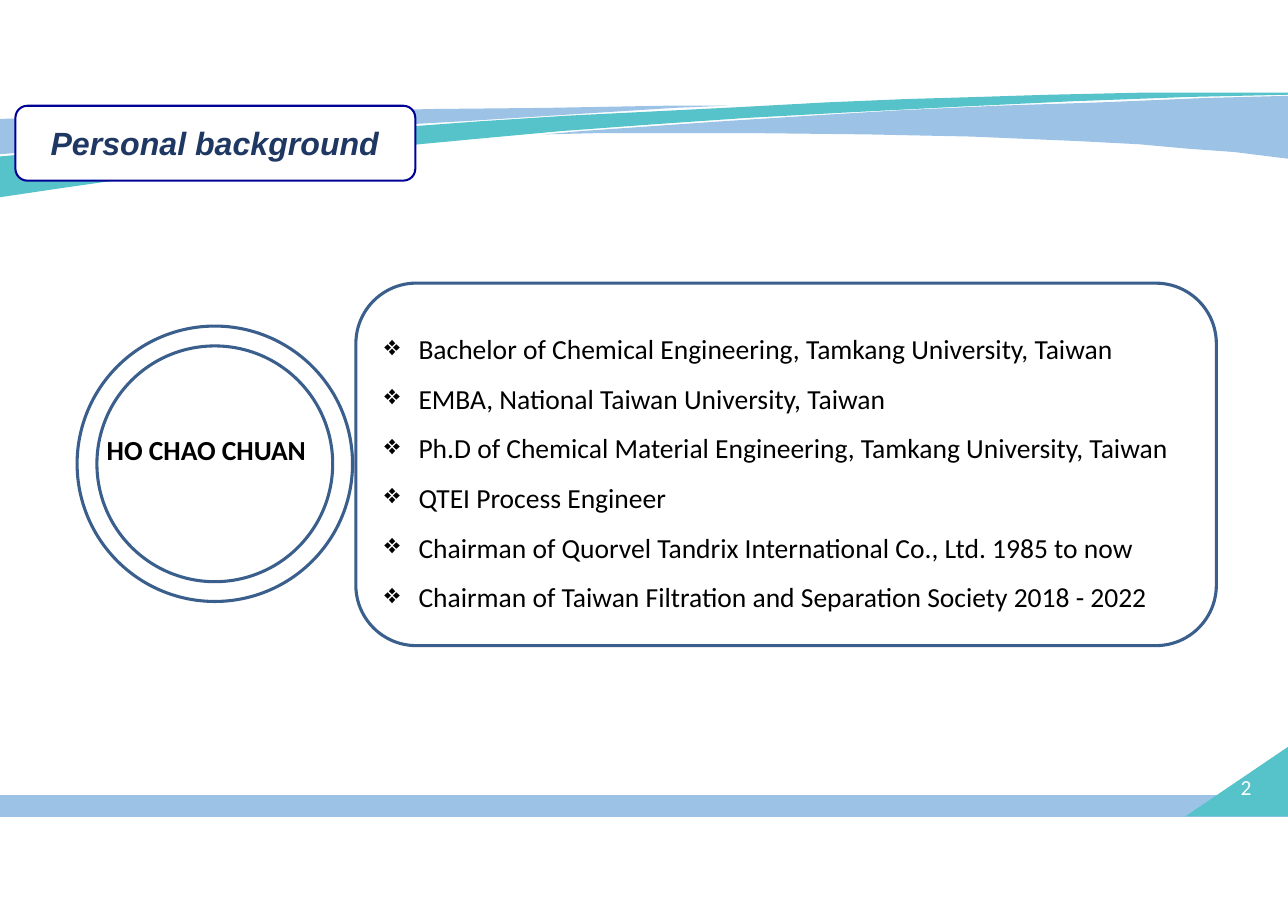
from dataclasses import dataclass

from lxml import etree
from pptx import Presentation
from pptx.dml.color import RGBColor
from pptx.enum.shapes import MSO_SHAPE as Shape
from pptx.enum.text import MSO_ANCHOR as Anchor, MSO_AUTO_SIZE as AutoSize, PP_ALIGN as Align
from pptx.oxml.ns import qn
from pptx.util import Inches, Pt


@dataclass(frozen=True)
class Theme:
    blue: str = "9CC3E6"
    teal: str = "56C3CA"
    white: str = "FFFFFF"
    black: str = "000000"
    outline: str = "3A5F8C"
    badge_line: str = "000094"
    title: str = "1F3763"
    heading_font: str = "Arial"
    body_font: str = "Calibri"
    title_size: float = 21
    body_size: float = 18
    number_size: float = 14
    outline_width: float = 2
    badge_width: float = 1.32


THEME = Theme()
WIDTH, HEIGHT = 11.69, 8.26
TITLE = "Personal background"
PERSON = "HO CHAO CHUAN"
PAGE_NUMBER = "2"
CAREER = [
    "Bachelor of Chemical Engineering, Tamkang University, Taiwan",
    "EMBA, National Taiwan University, Taiwan",
    "Ph.D of Chemical Material Engineering, Tamkang University, Taiwan",
    "QTEI Process Engineer",
    "Chairman of Quorvel Tandrix International Co., Ltd. 1985 to now",
    "Chairman of Taiwan Filtration and Separation Society 2018 - 2022",
]

FOOTER_BAND = [(0, 7.22), (WIDTH, 7.22), (WIDTH, 7.42), (0, 7.42)]
FOOTER_CORNER = [(WIDTH, 7.41), (WIDTH, 6.78), (10.76, 7.41)]
LEFT_RIBBON = [
    (6.6, 0.96), (6.04, 0.96), (4.96, 0.98), (3.94, 0.99), (2.99, 1.01), (2.12, 1.02),
    (1.36, 1.04), (0.42, 1.07), (0, 1.08), (0, 1.4), (0.93, 1.33), (2.47, 1.21),
    (3.33, 1.15), (4.23, 1.1), (5.17, 1.04), (6.12, 0.98),
]
RIGHT_RIBBON = [
    (WIDTH, 0.87), (10.94, 0.89), (9.98, 0.93), (9.06, 0.96), (8.19, 1), (7.36, 1.05),
    (6.57, 1.1), (6, 1.14), (5.28, 1.19), (4.94, 1.22), (5.38, 1.21), (6.11, 1.21),
    (6.94, 1.21), (7.86, 1.22), (8.81, 1.24), (9.76, 1.28), (10.34, 1.31),
    (10.78, 1.35), (11.2, 1.38), (11.6, 1.43), (WIDTH, 1.44),
]
TEAL_RIBBON = [
    (WIDTH, 0.86), (WIDTH, 0.84), (10.4, 0.84), (9.52, 0.86), (8.88, 0.88), (8.2, 0.9),
    (7.49, 0.93), (6.75, 0.97), (5.96, 1.01), (5.15, 1.05), (4.37, 1.1), (3.69, 1.15),
    (2.39, 1.24), (1.49, 1.3), (0.44, 1.38), (0, 1.42), (0, 1.79), (0.54, 1.71),
    (0.96, 1.65), (1.42, 1.58), (1.94, 1.51), (2.51, 1.45), (3.13, 1.38), (3.8, 1.31),
    (4.33, 1.26), (5.09, 1.19), (5.91, 1.13), (6.78, 1.07), (7.7, 1.02), (8.67, 0.97),
    (9.71, 0.92), (10.79, 0.88),
]
BANDS = [
    (FOOTER_BAND, THEME.blue),
    (FOOTER_CORNER, THEME.teal),
    (LEFT_RIBBON, THEME.blue),
    (RIGHT_RIBBON, THEME.blue),
    (TEAL_RIBBON, THEME.teal),
]
RING_CENTER = (1.95, 4.21)
RING_DIAMETERS = (2.5, 2.14)


def color(value):
    return RGBColor.from_string(value)


def add_band(slide, points, fill):
    builder = slide.shapes.build_freeform(*map(Inches, points[0]), scale=1.0)
    builder.add_line_segments([(Inches(x), Inches(y)) for x, y in points[1:]], close=True)
    band = builder.convert_to_shape()
    band.shadow.inherit = False
    band.fill.solid()
    band.fill.fore_color.rgb = color(fill)
    band.line.fill.background()


def add_outline(slide, kind, box, line=THEME.outline, width=THEME.outline_width):
    frame = slide.shapes.add_shape(kind, *map(Inches, box))
    frame.shadow.inherit = False
    frame.fill.background()
    frame.line.color.rgb = color(line)
    frame.line.width = Pt(width)
    return frame


def style(paragraph, size, ink, font=THEME.body_font, bold=False, italic=False):
    for run in paragraph.runs:
        run.font.name, run.font.size = font, Pt(size)
        run.font.bold, run.font.italic = bold, italic
        run.font.color.rgb = color(ink)


def set_margins(text_frame, left=0, top=0, right=0, bottom=0):
    text_frame.margin_left, text_frame.margin_top = Inches(left), Inches(top)
    text_frame.margin_right, text_frame.margin_bottom = Inches(right), Inches(bottom)


def add_label(slide, box, text):
    text_frame = slide.shapes.add_textbox(*map(Inches, box)).text_frame
    text_frame.word_wrap = True
    text_frame.text = text
    return text_frame


def add_title(slide):
    badge = add_outline(slide, Shape.ROUNDED_RECTANGLE, (0.14, 0.96, 3.63, 0.68),
                        THEME.badge_line, THEME.badge_width)
    badge.adjustments[0] = 0.16
    badge.fill.solid()
    badge.fill.fore_color.rgb = color(THEME.white)

    title = slide.shapes.title
    badge._element.addnext(title._element)
    title.left, title.top, title.width, title.height = map(Inches, (0.2, 1.11, 3.5, 0.37))
    text_frame = title.text_frame
    text_frame.text = TITLE
    text_frame.auto_size = AutoSize.NONE
    text_frame.vertical_anchor = Anchor.TOP
    set_margins(text_frame, top=0.01)
    heading = text_frame.paragraphs[0]
    heading.alignment = Align.CENTER
    style(heading, THEME.title_size, THEME.title, THEME.heading_font, True, True)


def add_career(slide):
    panel = add_outline(slide, Shape.ROUNDED_RECTANGLE, (3.23, 2.57, 7.81, 3.29))
    text_frame = panel.text_frame
    text_frame.word_wrap = True
    text_frame.vertical_anchor = Anchor.MIDDLE
    text_frame.text = "\n".join(CAREER)
    indent = Inches(0.31)
    for entry in text_frame.paragraphs:
        entry.alignment = Align.LEFT
        entry.line_spacing = 1.5
        properties = entry._p.get_or_add_pPr()
        properties.set("marL", str(indent))
        properties.set("indent", str(-indent))
        etree.SubElement(properties, qn("a:buChar")).set("char", "❖")
        style(entry, THEME.body_size, THEME.black)


def main():
    deck = Presentation()
    deck.slide_width, deck.slide_height = Inches(WIDTH), Inches(HEIGHT)
    slide = deck.slides.add_slide(deck.slide_layouts[5])

    for points, fill in BANDS:
        add_band(slide, points, fill)
    add_title(slide)

    page = add_label(slide, (11.22, 7.06, 0.28, 0.22), PAGE_NUMBER)
    set_margins(page, left=0.04)
    page.paragraphs[0].line_spacing = Pt(14.3)
    style(page.paragraphs[0], THEME.number_size, THEME.white)

    center_x, center_y = RING_CENTER
    for diameter in RING_DIAMETERS:
        radius = diameter / 2
        add_outline(slide, Shape.OVAL,
                    (center_x - radius, center_y - radius, diameter, diameter))
    person = add_label(slide, (0.87, 3.88, 2.14, 0.4), PERSON)
    style(person.paragraphs[0], THEME.body_size, THEME.black, bold=True)

    add_career(slide)
    deck.save("out.pptx")


if __name__ == "__main__":
    main()
